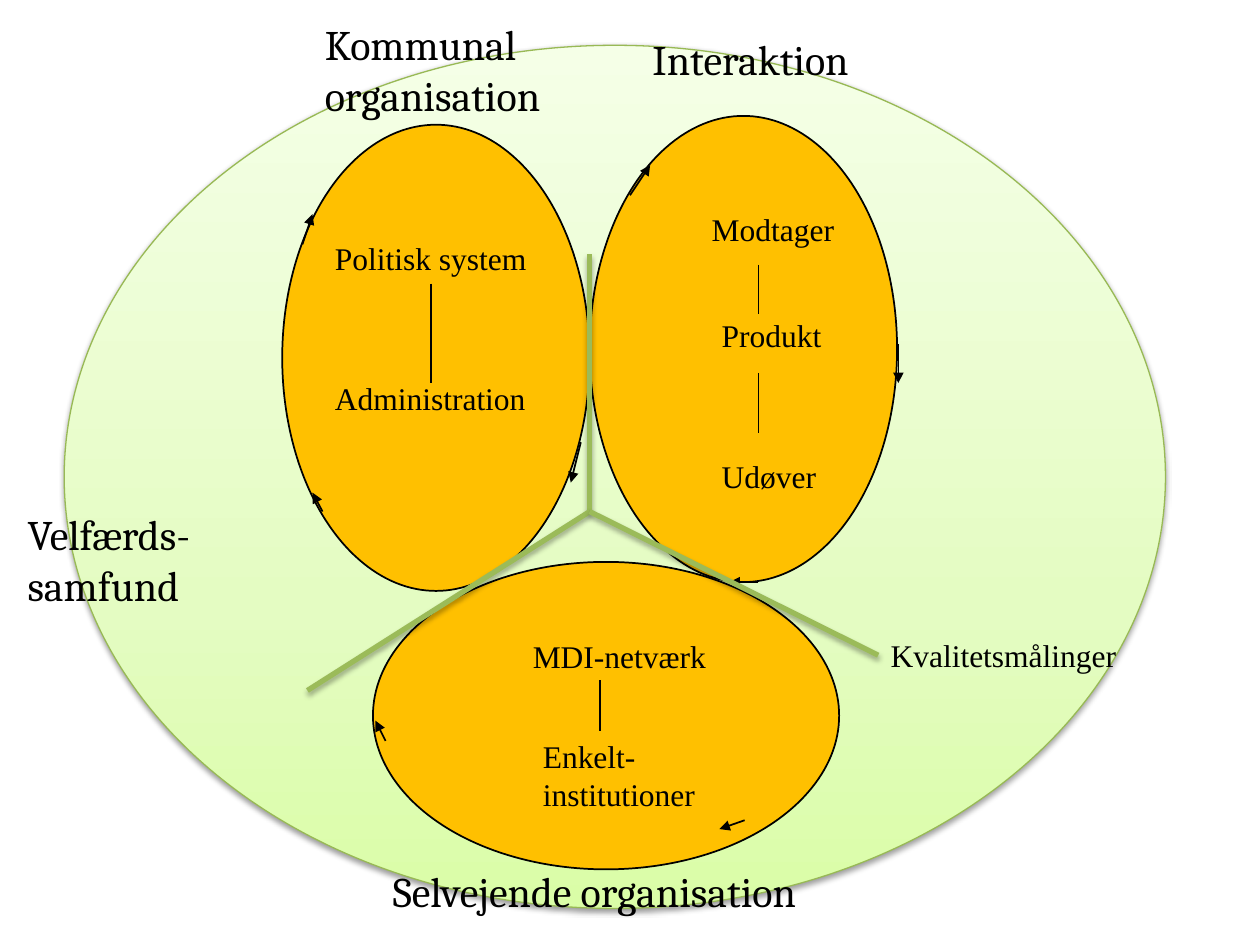
"""Build a slide of three organisation cycles inside the welfare society."""
from lxml.etree import SubElement
from pptx import Presentation
from pptx.dml.color import RGBColor
from pptx.enum.shapes import MSO_CONNECTOR, MSO_SHAPE
from pptx.oxml.ns import qn
from pptx.util import Inches, Pt

BLACK, ORANGE, GREEN, DARK_GREEN = "000000", "FFC000", "9BBB59", "98B955"
HEADING, BODY = ("Cambria", 24), ("Times New Roman", 18)

SOCIETY = (0.51, 0.36, 8.74, 6.85)
SOCIETY_STOPS = [(0, "DAFDA7"), (35, "E4FCC2"), (100, "F5FFE7")]
CYCLE_SIZE = (2.44, 3.7)
CYCLES = [(3.59, 3.83, 90), (4.68, 0.92, 0), (2.24, 0.99, 0)]
LINKS = [
    ((6.02, 2.1), (6.02, 2.49)),
    ((6.02, 2.96), (6.02, 3.44)),
    ((3.42, 2.25), (3.42, 3.04)),
    ((4.76, 5.4), (4.76, 5.8)),
]
ARROWS = [
    ((5, 1.55), (5.16, 1.31)),
    ((7.13, 2.73), (7.13, 3.04)),
    ((2.4, 1.94), (2.48, 1.7)),
    ((4.61, 3.51), (4.53, 3.83)),
    ((6.02, 4.62), (5.79, 4.62)),
    ((2.56, 4.06), (2.48, 3.91)),
    ((5.91, 6.51), (5.71, 6.58)),
    ((3.06, 5.88), (2.98, 5.72)),
]
HUB = (4.68, 4.06)
SPOKE_ENDS = [(4.68, 2.02), (2.44, 5.48)]
LABELS = [
    ("Interaktion", HEADING, (5.08, 0.22, 2.13, 0.51)),
    ("Modtager", BODY, (5.55, 1.62, 1.65, 0.4)),
    ("Produkt", BODY, (5.63, 2.46, 1.5, 0.4)),
    ("Udøver", BODY, (5.63, 3.58, 1.34, 0.4)),
    ("Politisk system", BODY, (2.56, 1.85, 1.81, 0.4)),
    ("Administration", BODY, (2.56, 2.96, 1.81, 0.4)),
    ("Kommunal organisation", HEADING, (2.48, 0.1, 2.44, 0.91)),
    ("Selvejende organisation", HEADING, (3.02, 6.82, 4.96, 0.5)),
    ("MDI-netværk", BODY, (4.13, 5.01, 1.81, 0.4)),
    ("Enkelt-institutioner", BODY, (4.21, 5.8, 2.05, 0.71)),
    ("Velfærds-samfund", HEADING, (0.12, 3.99, 2.28, 0.91)),
]
MEASUREMENTS = ("Kvalitetsmålinger", BODY, (6.97, 5, 2.28, 0.4))


def color(value):
    return RGBColor.from_string(value)


def lengths(values):
    return [Inches(value) for value in values]


def add_stop(stops, position, value):
    stop = SubElement(stops, qn("a:gs"), pos=str(position * 1000))
    SubElement(stop, qn("a:srgbClr"), val=value)


def add_shadow(effects, distance, opacity):
    shadow = SubElement(effects, qn("a:outerShdw"), blurRad=str(Pt(3.1)),
                        dist=str(Pt(distance)), dir="5400000", rotWithShape="0")
    tint = SubElement(shadow, qn("a:srgbClr"), val=BLACK)
    SubElement(tint, qn("a:alpha"), val=str(opacity * 1000))


def add_ellipse(page, place, outline, width):
    ellipse = page.shapes.add_shape(MSO_SHAPE.OVAL, *lengths(place))
    ellipse.shadow.inherit = False
    ellipse.line.color.rgb = color(outline)
    ellipse.line.width = Pt(width)
    return ellipse


def add_society(page):
    society = add_ellipse(page, SOCIETY, DARK_GREEN, 0.75)
    society.fill.gradient()
    society.fill.gradient_angle = 90
    properties = society.element.spPr
    stops = properties.find(".//" + qn("a:gsLst"))
    for stop in list(stops):
        stops.remove(stop)
    for position, value in SOCIETY_STOPS:
        add_stop(stops, position, value)
    add_shadow(properties.find(qn("a:effectLst")), 1.6, 38)


def add_line(page, start, end, value=BLACK, width=1, arrow=False):
    line = page.shapes.add_connector(MSO_CONNECTOR.STRAIGHT, *lengths(start + end))
    line.line.color.rgb = color(value)
    line.line.width = Pt(width)
    properties = line.element.spPr
    if arrow:
        SubElement(properties.find(qn("a:ln")), qn("a:tailEnd"), type="triangle")
    SubElement(properties, qn("a:effectLst"))
    return line


def add_spoke(page, end):
    spoke = add_line(page, HUB, end, GREEN, 3)
    add_shadow(spoke.element.spPr.find(qn("a:effectLst")), 1.8, 35)
    return spoke


def add_label(page, text, style, place):
    box = page.shapes.add_textbox(*lengths(place))
    box.text_frame.word_wrap = True
    span = box.text_frame.paragraphs[0].add_run()
    span.text = text
    span.font.name, size = style
    span.font.size = Pt(size)
    span.font.color.rgb = color(BLACK)
    return box


def main():
    deck = Presentation()
    deck.slide_width, deck.slide_height = Inches(10), Inches(7.5)
    page = deck.slides.add_slide(deck.slide_layouts[6])
    add_society(page)
    for left, top, rotation in CYCLES:
        cycle = add_ellipse(page, (left, top) + CYCLE_SIZE, BLACK, 1)
        cycle.rotation = rotation
        cycle.fill.solid()
        cycle.fill.fore_color.rgb = color(ORANGE)
    for start, end in LINKS:
        add_line(page, start, end)
    for start, end in ARROWS:
        add_line(page, start, end, arrow=True)
    for text, style, place in LABELS:
        add_label(page, text, style, place)
    for end in SPOKE_ENDS:
        add_spoke(page, end)
    measurements = add_label(page, *MEASUREMENTS)
    left, top, _, height = MEASUREMENTS[2]
    add_spoke(page, (left, top + height / 2)).end_connect(measurements, 1)
    deck.save("out.pptx")


if __name__ == "__main__":
    main()
